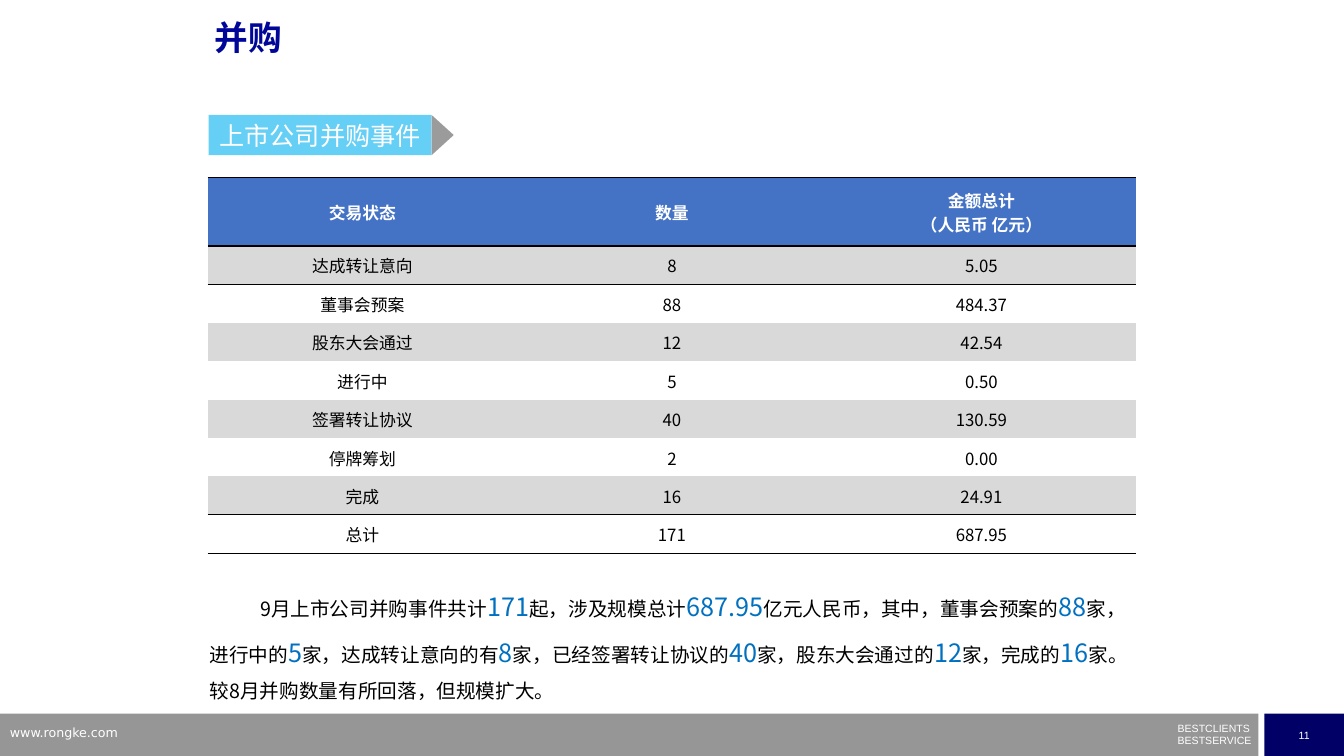
from pptx import Presentation
from pptx.dml.color import RGBColor
from pptx.enum.shapes import MSO_SHAPE
from pptx.enum.text import MSO_ANCHOR, MSO_AUTO_SIZE, PP_ALIGN
from pptx.oxml.ns import qn
from pptx.util import Inches, Pt
from lxml.etree import SubElement

WIDTH, HEIGHT = 13.33, 7.5
CJK = "Noto Sans CJK SC"
BLACK, WHITE = "000000", "FFFFFF"
NO_GRID_STYLE = "{2D5ABB26-0587-4C30-8999-92F81FD0307C}"

DEALS = [
    ("交易状态", "数量", "金额总计\n（人民币 亿元）"),
    ("达成转让意向", "8", "5.05"),
    ("董事会预案", "88", "484.37"),
    ("股东大会通过", "12", "42.54"),
    ("进行中", "5", "0.50"),
    ("签署转让协议", "40", "130.59"),
    ("停牌筹划", "2", "0.00"),
    ("完成", "16", "24.91"),
    ("总计", "171", "687.95"),
]
# Figures between bars are highlighted.
SUMMARY = (
    "9月上市公司并购事件共计|171|起，涉及规模总计|687.95|亿元人民币，其中，"
    "董事会预案的|88|家，进行中的|5|家，达成转让意向的有|8|家，"
    "已经签署转让协议的|40|家，股东大会通过的|12|家，完成的|16|"
    "家。较8月并购数量有所回落，但规模扩大。"
)


def rgb(value):
    return RGBColor.from_string(value)


def inches(*lengths):
    return [Inches(length) for length in lengths]


def write(para, text, size=12, color=BLACK, font=CJK, bold=False, align=None):
    """Append text to a paragraph; newlines become line breaks."""
    if align is not None:
        para.alignment = align
    for index, line in enumerate(text.split("\n")):
        if index:
            para.add_line_break()
        span = para.add_run()
        span.text = line
        span.font.size = Pt(size)
        span.font.bold = bold
        span.font.name = font
        span.font.color.rgb = rgb(color)
        SubElement(span.font._element, qn("a:ea")).set("typeface", CJK)


def add_block(page, kind, box, color, opacity=None):
    block = page.shapes.add_shape(kind, *inches(*box))
    block.shadow.inherit = False
    block.line.fill.background()
    block.fill.solid()
    block.fill.fore_color.rgb = rgb(color)
    if opacity is not None:
        fill_color = block.fill._xPr.find(qn("a:solidFill"))[0]
        SubElement(fill_color, qn("a:alpha")).set("val", str(opacity * 1000))
    block.text_frame.vertical_anchor = MSO_ANCHOR.MIDDLE
    return block


def add_text_frame(page, box, margin=None):
    frame = page.shapes.add_textbox(*inches(*box)).text_frame
    frame.word_wrap = True
    if margin is not None:
        frame.margin_left = frame.margin_right = Inches(margin)
        frame.margin_top = frame.margin_bottom = Inches(margin)
    return frame


def add_footer(page, left, top, width, height):
    number_width = 0.79
    number_left = left + width - number_width
    add_block(page, MSO_SHAPE.RECTANGLE,
              (left, top, number_left - 0.06 - left, height), "969696")
    number = add_block(page, MSO_SHAPE.RECTANGLE,
                       (number_left, top, number_width, height), "000066")
    write(number.text_frame.paragraphs[0], "11", size=7.5, color=WHITE,
          font="Arial", align=PP_ALIGN.CENTER)

    motto = add_text_frame(page, (number_left - 0.86, top + 0.14, 0.76, 0.2), margin=0)
    for index, line in enumerate(("BESTCLIENTS", "BESTSERVICE")):
        para = motto.add_paragraph() if index else motto.paragraphs[0]
        para.line_spacing = 0.5
        if index:
            para.space_before = Pt(4)
        write(para, line, size=7.5, color=WHITE, font="Arial")

    site = add_text_frame(page, (left, top + 0.06, 3.2, 0.26))
    write(site.paragraphs[0], "www.rongke.com", size=9, color=WHITE, font="DejaVu Sans")


def add_title(page, *box):
    title = page.shapes.title
    title.left, title.top, title.width, title.height = inches(*box)
    frame = title.text_frame
    frame.auto_size = MSO_AUTO_SIZE.NONE
    frame.vertical_anchor = MSO_ANCHOR.TOP
    para = frame.paragraphs[0]
    para.line_spacing = 0.9
    write(para, "并购", size=24, color="000798", font="Arial", bold=True,
          align=PP_ALIGN.LEFT)


def add_section_tag(page, left, top, width, height):
    tip = 0.22
    label_width = width - tip
    label = add_block(page, MSO_SHAPE.RECTANGLE,
                      (left, top, label_width, height), "00B0F0", opacity=60)
    label.text_frame.word_wrap = False
    write(label.text_frame.paragraphs[0], "上市公司并购事件", size=18, color=WHITE,
          align=PP_ALIGN.CENTER)
    # The box is given before the quarter turn, around the same centre.
    shift = (height - tip) / 2
    arrow = add_block(page, MSO_SHAPE.ISOSCELES_TRIANGLE,
                      (left + label_width - shift, top + shift, height, tip),
                      "595959", opacity=60)
    arrow.rotation = 90


def rule_cell(cell, sides):
    """Draw black one-point borders on the given sides, T before B."""
    properties = cell._tc.get_or_add_tcPr()
    for index, side in enumerate(sides):
        line = SubElement(properties, qn(f"a:ln{side}"), w=str(Pt(1)))
        fill = SubElement(line, qn("a:solidFill"))
        SubElement(fill, qn("a:srgbClr")).set("val", BLACK)
        properties.insert(index, line)


def add_deal_table(page, left, top, width, height):
    header_height = 0.68
    row_height = (height - header_height) / (len(DEALS) - 1)
    last = len(DEALS) - 1
    rules = {0: "TB", 1: "T", last - 1: "B", last: "TB"}
    frame = page.shapes.add_table(len(DEALS), len(DEALS[0]),
                                  *inches(left, top, width, height))
    table = frame.table
    table._tbl.tblPr.find(qn("a:tableStyleId")).text = NO_GRID_STYLE
    for column in table.columns:
        column.width = Inches(width / len(DEALS[0]))
    for row, values in enumerate(DEALS):
        header = row == 0
        table.rows[row].height = Inches(header_height if header else row_height)
        for column, value in enumerate(values):
            cell = table.cell(row, column)
            cell.vertical_anchor = MSO_ANCHOR.MIDDLE
            cell.margin_left = cell.margin_right = cell.margin_top = Inches(0.01)
            cell.margin_bottom = 0
            if header or row % 2:
                cell.fill.solid()
                cell.fill.fore_color.rgb = rgb("4472C4" if header else "D9D9D9")
            else:
                cell.fill.background()
            rule_cell(cell, rules.get(row, ""))
            write(cell.text_frame.paragraphs[0], value, bold=header,
                  color=WHITE if header else BLACK, align=PP_ALIGN.CENTER)


def add_summary(page, *box):
    para = add_text_frame(page, box, margin=0).paragraphs[0]
    para.line_spacing = 1.5
    properties = para._p.get_or_add_pPr()
    properties.set("marL", "0")
    properties.set("indent", str(Inches(0.5)))
    for index, part in enumerate(SUMMARY.split("|")):
        figure = index % 2
        write(para, part, size=18 if figure else 14,
              color="0070C0" if figure else BLACK)


def main():
    deck = Presentation()
    deck.slide_width, deck.slide_height = inches(WIDTH, HEIGHT)
    page = deck.slides.add_slide(deck.slide_layouts[5])
    add_footer(page, 0, HEIGHT - 0.42, WIDTH, 0.42)
    add_section_tag(page, 2.07, 1.14, 2.43, 0.4)
    add_title(page, 2.03, 0.16, 9, 0.7)
    add_summary(page, 2.08, 5.72, 9.19, 1.22)
    add_deal_table(page, 2.06, 1.76, 9.21, 3.73)
    deck.save("out.pptx")


if __name__ == "__main__":
    main()
